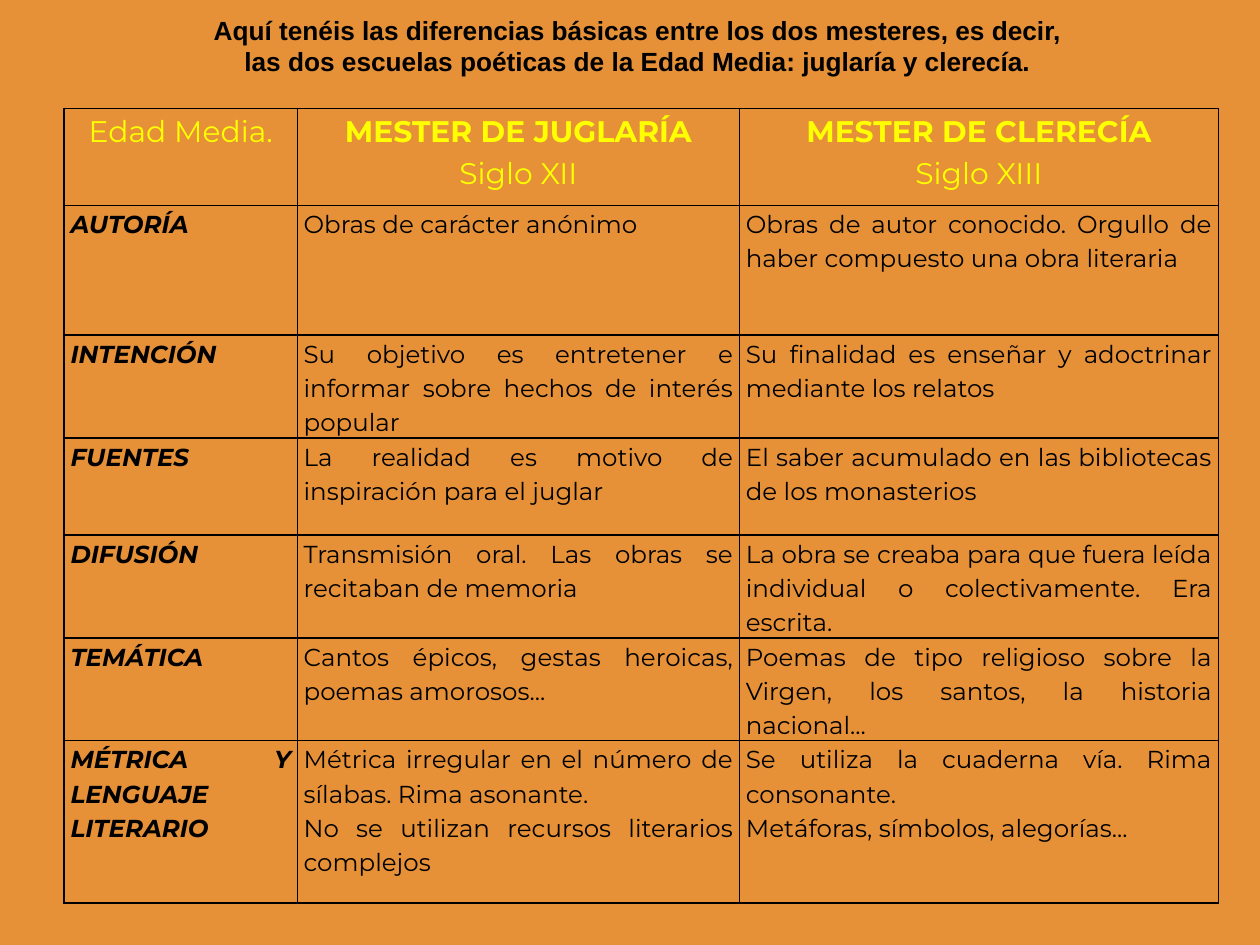
import pptx
import pptx.dml.color
import pptx.enum.text
import pptx.oxml
import pptx.oxml.ns
import pptx.util
from pptx.util import Inches

RGBColor = pptx.dml.color.RGBColor
ALIGN = pptx.enum.text.PP_ALIGN

ORANGE = RGBColor(0xE6, 0x91, 0x38)
YELLOW = RGBColor(0xFF, 0xFF, 0x00)
BLACK = RGBColor(0x00, 0x00, 0x00)

TITLE = [
    "Aquí tenéis las diferencias básicas entre los dos mesteres, es decir,",
    "las dos escuelas poéticas de la Edad Media: juglaría y clerecía.",
]
HEADER = [
    ["Edad Media."],
    ["MESTER DE JUGLARÍA", "Siglo XII"],
    ["MESTER DE CLERECÍA", "Siglo XIII"],
]
# Each row: label, juglaría paragraphs, clerecía paragraphs
ROWS = [
    ("AUTORÍA",
     ["Obras de carácter anónimo"],
     ["Obras de autor conocido. Orgullo de haber compuesto una obra literaria"]),
    ("INTENCIÓN",
     ["Su objetivo es entretener e informar sobre hechos de interés popular"],
     ["Su finalidad es enseñar y adoctrinar mediante los relatos"]),
    ("FUENTES",
     ["La realidad es motivo de inspiración para el juglar"],
     ["El saber acumulado en las bibliotecas de los monasterios"]),
    ("DIFUSIÓN",
     ["Transmisión oral. Las obras se recitaban de memoria"],
     ["La obra se creaba para que fuera leída individual o colectivamente. Era escrita."]),
    ("TEMÁTICA",
     ["Cantos épicos, gestas heroicas, poemas amorosos..."],
     ["Poemas de tipo religioso sobre la Virgen, los santos, la historia nacional..."]),
    ("MÉTRICA Y LENGUAJE LITERARIO",
     ["Métrica irregular en el número de sílabas. Rima asonante.",
      "No se utilizan recursos literarios complejos"],
     ["Se utiliza la cuaderna vía. Rima consonante.",
      "Metáforas, símbolos, alegorías..."]),
]
COLUMN_WIDTHS = [1.85, 3.51, 3.8]
ROW_HEIGHTS = [0.77, 1.03, 0.81, 0.77, 0.81, 0.81, 1.29]


def write_text(frame, text, font="Montserrat", size=14, color=BLACK, bold=False,
               italic=False, align=ALIGN.JUSTIFY, spacing=1.15):
    """Add one paragraph, using the first one while it is still empty."""
    paragraph = frame.paragraphs[0]
    if paragraph.runs:
        paragraph = frame.add_paragraph()
    paragraph.alignment = align
    paragraph.line_spacing = spacing
    run = paragraph.add_run()
    run.text = text
    run.font.name = font
    run.font.size = pptx.util.Pt(size)
    run.font.bold = bold
    run.font.italic = italic
    run.font.color.rgb = color


def format_cell(cell):
    """Black one-point borders, no fill and narrow margins."""
    cell.margin_left = cell.margin_right = Inches(0.05)
    cell.margin_top = cell.margin_bottom = 0
    properties = cell._tc.get_or_add_tcPr()
    for side in ("lnL", "lnR", "lnT", "lnB"):
        properties.append(pptx.oxml.parse_xml(
            f'<a:{side} {pptx.oxml.ns.nsdecls("a")} w="12700"><a:solidFill>'
            f'<a:srgbClr val="{BLACK}"/></a:solidFill></a:{side}>'))
    cell.fill.background()


def add_title(slide):
    box = slide.shapes.add_textbox(Inches(0.06), Inches(0.11), Inches(10), Inches(0.65))
    frame = box.text_frame
    frame.word_wrap = True
    frame.margin_top = frame.margin_bottom = 0
    for line in TITLE:
        write_text(frame, line, font="Arial", size=15, bold=True,
                   align=ALIGN.CENTER, spacing=1.0)


def add_comparison(slide):
    table = slide.shapes.add_table(
        len(ROW_HEIGHTS), len(COLUMN_WIDTHS), Inches(0.51), Inches(0.86),
        Inches(sum(COLUMN_WIDTHS)), Inches(sum(ROW_HEIGHTS))).table
    table.first_row = table.horz_banding = False
    for column, width in zip(table.columns, COLUMN_WIDTHS):
        column.width = Inches(width)
    for row, height in zip(table.rows, ROW_HEIGHTS):
        row.height = Inches(height)
    for cell in table.iter_cells():
        format_cell(cell)

    for column, lines in enumerate(HEADER):
        for index, line in enumerate(lines):
            write_text(table.cell(0, column).text_frame, line, size=17, color=YELLOW,
                       bold=column > 0 and index == 0, align=ALIGN.CENTER)
    for row, (label, *descriptions) in enumerate(ROWS, start=1):
        write_text(table.cell(row, 0).text_frame, label, bold=True, italic=True)
        for column, lines in enumerate(descriptions, start=1):
            for line in lines:
                write_text(table.cell(row, column).text_frame, line)


def main():
    presentation = pptx.Presentation()
    presentation.slide_width = Inches(10)
    presentation.slide_height = Inches(7.5)
    slide = presentation.slides.add_slide(presentation.slide_layouts[6])
    slide.background.fill.solid()
    slide.background.fill.fore_color.rgb = ORANGE
    add_comparison(slide)
    add_title(slide)
    presentation.save("out.pptx")


if __name__ == "__main__":
    main()
